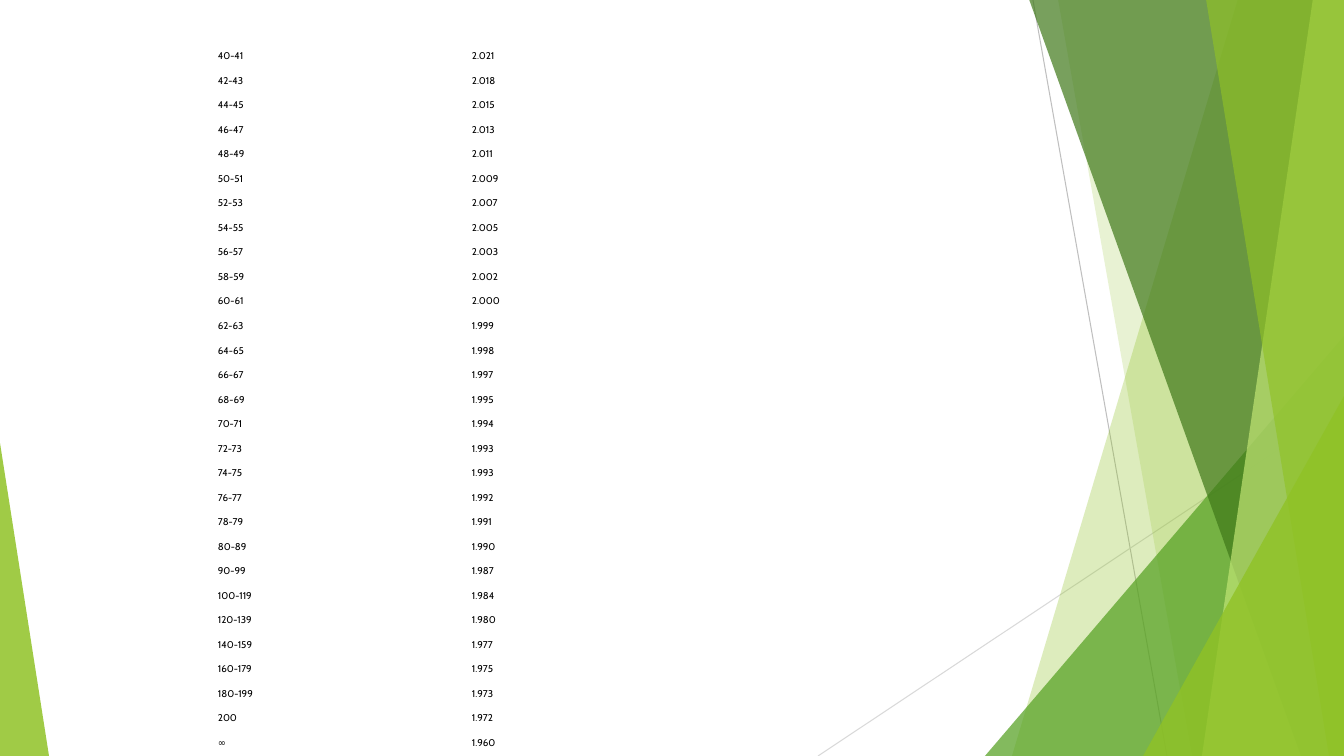
"""Build a slide with a table of critical t values beside green facets."""
import pptx
import pptx.util
import pptx.dml.color
import pptx.enum.shapes
import pptx.enum.text
import lxml.etree

ROWS = [
    ("40-41", "2.021"), ("42-43", "2.018"), ("44-45", "2.015"),
    ("46-47", "2.013"), ("48-49", "2.011"), ("50-51", "2.009"),
    ("52-53", "2.007"), ("54-55", "2.005"), ("56-57", "2.003"),
    ("58-59", "2.002"), ("60-61", "2.000"), ("62-63", "1.999"),
    ("64-65", "1.998"), ("66-67", "1.997"), ("68-69", "1.995"),
    ("70-71", "1.994"), ("72-73", "1.993"), ("74-75", "1.993"),
    ("76-77", "1.992"), ("78-79", "1.991"), ("80-89", "1.990"),
    ("90-99", "1.987"), ("100-119", "1.984"), ("120-139", "1.980"),
    ("140-159", "1.977"), ("160-179", "1.975"), ("180-199", "1.973"),
    ("200", "1.972"), ("∞", "1.960"),
]
COLORS = {
    "lime": "90C226", "leaf": "54A021", "moss": "3F7819", "pale": "C0E474",
    "gray": "BFBFBF", "mist": "D9D9D9", "ink": "000000",
}
FONT = "Cabin"
WIDE, HIGH = 1344, 756
LINES = [("gray", (1033, 0), (1167, HIGH)), ("mist", (WIDE, 406), (818, HIGH))]
FACETS = [
    ("band", "lime", 30, (1238, 1012)),
    ("band", "lime", 20, (1058, 1192)),
    ("peak", "leaf", 72, (985, 336, 359, 1)),
    ("band", "moss", 70, (1029, 1301)),
    ("band", "pale", 70, (1313, 1202)),
    ("band", "lime", 65, (1206, 1329)),
    ("peak", "lime", 80, (1143, 396, 201, 1)),
    ("peak", "lime", 85, (0, 443, 49, 0)),
]
TABLE = (214, 44, 508, 712)
PX = pptx.util.Inches(1) / 100.8
NS = "{http://schemas.openxmlformats.org/drawingml/2006/main}"


def px(num):
    return pptx.util.Emu(round(num * PX))


def rgb(name):
    return pptx.dml.color.RGBColor.from_string(COLORS[name])


def add_line(slide, color, start, end):
    kind = pptx.enum.shapes.MSO_CONNECTOR.STRAIGHT
    line = slide.shapes.add_connector(kind, *map(px, start + end))
    line.line.color.rgb = rgb(color)
    line.line.width = pptx.util.Pt(0.75)
    lxml.etree.SubElement(line._element.spPr, NS + "effectLst")


def add_band(slide, top, foot):
    pen = slide.shapes.build_freeform(top, -1, PX)
    pen.add_line_segments([(WIDE, -1), (WIDE, HIGH), (foot, HIGH)])
    return pen.convert_to_shape()


def add_peak(slide, left, top, width, tip):
    kind = pptx.enum.shapes.MSO_SHAPE.ISOSCELES_TRIANGLE
    peak = slide.shapes.add_shape(kind, *map(px, (left, top, width, HIGH - top)))
    peak.adjustments[0] = tip
    return peak


def add_facet(slide, kind, color, alpha, dims):
    draw = {"band": add_band, "peak": add_peak}[kind]
    facet = draw(slide, *dims)
    facet.shadow.inherit = False
    facet.line.fill.background()
    facet.fill.solid()
    facet.fill.fore_color.rgb = rgb(color)
    tint = facet._element.spPr.find(f"{NS}solidFill/{NS}srgbClr")
    lxml.etree.SubElement(tint, NS + "alpha", val=str(alpha * 1000))


def fill_cell(cell, text):
    cell.fill.background()
    cell.vertical_anchor = pptx.enum.text.MSO_ANCHOR.MIDDLE
    cell.margin_left = cell.margin_right = px(4)
    cell.margin_top = cell.margin_bottom = px(2)
    cell.text_frame.text = text
    font = cell.text_frame.paragraphs[0].runs[0].font
    font.name = FONT
    font.size = pptx.util.Pt(7)
    font.bold = False
    font.color.rgb = rgb("ink")


def add_grid(slide):
    grid = slide.shapes.add_table(len(ROWS), 2, *map(px, TABLE)).table
    grid.first_row = grid.horz_banding = False
    for row, texts in zip(grid.rows, ROWS):
        row.height = px(TABLE[3] / len(ROWS))
        for cell, text in zip(row.cells, texts):
            fill_cell(cell, text)


def main():
    deck = pptx.Presentation()
    deck.slide_width, deck.slide_height = px(WIDE), px(HIGH)
    slide = deck.slides.add_slide(deck.slide_layouts[6])
    for line in LINES:
        add_line(slide, *line)
    for facet in FACETS:
        add_facet(slide, *facet)
    add_grid(slide)
    deck.save("out.pptx")


if __name__ == "__main__":
    main()
